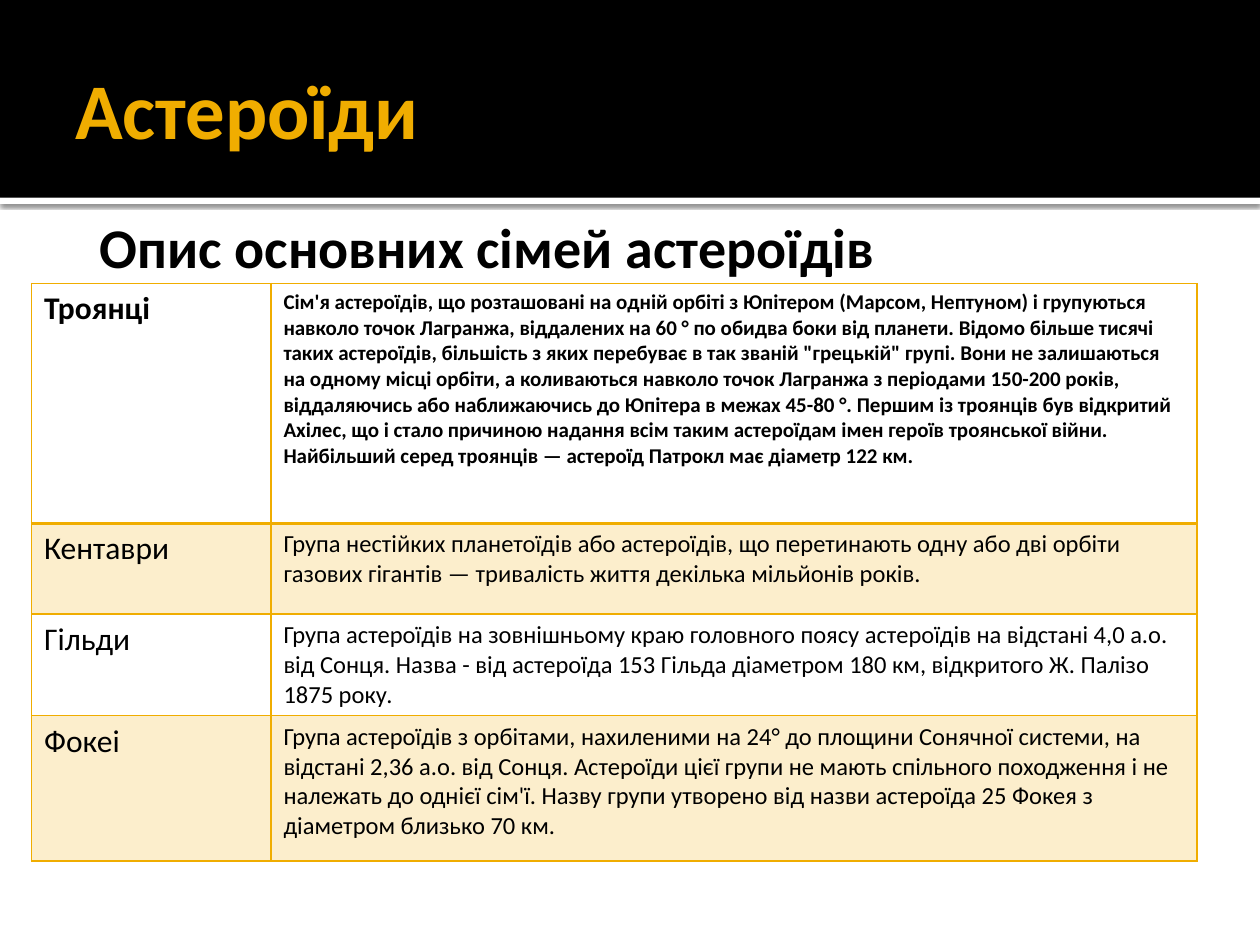
from lxml import etree
from pptx import Presentation
from pptx.dml.color import RGBColor
from pptx.enum import shapes, text
from pptx.oxml import ns
from pptx.util import Pt

GOLD, BLACK, WHITE = "F0AD00", "000000", "FFFFFF"
ROWS = [
    ("Троянці", "Сім'я астероїдів, що розташовані на одній орбіті з Юпітером (Марсом, Нептуном) і групуються "
     "навколо точок Лагранжа, віддалених на 60 ° по обидва боки від планети. Відомо більше тисячі таких "
     "астероїдів, більшість з яких перебуває в так званій \"грецькій\" групі. Вони не залишаються на одному "
     "місці орбіти, а коливаються навколо точок Лагранжа з періодами 150-200 років, віддаляючись або "
     "наближаючись до Юпітера в межах 45-80 °. Першим із троянців був відкритий Ахілес, що і стало причиною "
     "надання всім таким астероїдам імен героїв троянської війни. Найбільший серед троянців — астероїд "
     "Патрокл має діаметр 122 км."),
    ("Кентаври", "Група нестійких планетоїдів або астероїдів, що перетинають одну або дві орбіти газових "
     "гігантів — тривалість життя декілька мільйонів років."),
    ("Гільди", "Група астероїдів на зовнішньому краю головного поясу астероїдів на відстані 4,0 а.о. від "
     "Сонця. Назва - від астероїда 153 Гільда діаметром 180 км, відкритого Ж. Палізо 1875 року."),
    ("Фокеі", "Група астероїдів з орбітами, нахиленими на 24° до площини Сонячної системи, на відстані "
     "2,36 а.о. від Сонця. Астероїди цієї групи не мають спільного походження і не належать до однієї сім'ї. "
     "Назву групи утворено від назви астероїда 25 Фокея з діаметром близько 70 км."),
]


def color(code):
    return RGBColor.from_string(code)


def node(parent, tag, **attrs):
    return etree.SubElement(parent, ns.qn(tag), attrs)


class Deck:
    """Holds the font and the current slide."""

    def __init__(self, slide, font="Calibri"):
        self.slide, self.font = slide, font

    def style(self, frame, size, code, bold):
        for run in frame.paragraphs[0].runs:
            font = run.font
            font.name, font.size, font.bold = self.font, Pt(size), bold
            font.color.rgb = color(code)

    def band(self, top, height, code, shade=False):
        box = self.slide.shapes.add_shape(
            shapes.MSO_SHAPE.RECTANGLE, 0, Pt(top), Pt(720), Pt(height))
        box.shadow.inherit = False
        box.fill.solid()
        box.fill.fore_color.rgb = color(code)
        box.line.fill.background()
        if shade:
            glow = node(box._element.spPr.find(ns.qn("a:effectLst")), "a:outerShdw",
                        blurRad=str(Pt(2.5)), dist=str(Pt(0.8)), dir="5400000",
                        algn="tl", rotWithShape="0")
            node(node(glow, "a:srgbClr", val=BLACK), "a:alpha", val="60000")

    def label(self, words, area, size, code, inset, anchor):
        box = self.slide.shapes.add_textbox(*map(Pt, area))
        frame = box.text_frame
        frame.word_wrap = True
        frame.vertical_anchor = anchor
        frame.margin_left, frame.margin_top, frame.margin_right, frame.margin_bottom = map(Pt, inset)
        frame.text = words
        self.style(frame, size, code, True)

    def cell(self, cell, words, size, head, tint):
        cell.text_frame.text = words
        self.style(cell.text_frame, size, BLACK, head)
        props = cell._tc.get_or_add_tcPr()
        for side in "LRTB":
            wide = 2 if head and side == "B" else 1
            line = node(props, f"a:ln{side}", w=str(Pt(wide)))
            node(node(line, "a:solidFill"), "a:srgbClr", val=GOLD)
        if tint:
            fill = node(node(props, "a:solidFill"), "a:srgbClr", val=GOLD)
            node(fill, "a:alpha", val="20000")
        else:
            node(props, "a:noFill")

    def table(self, rows, left, top, widths, heights):
        frame = self.slide.shapes.add_table(
            len(rows), len(widths), Pt(left), Pt(top), Pt(sum(widths)), Pt(sum(heights)))
        grid = frame.table
        for col, width in zip(grid.columns, widths):
            col.width = Pt(width)
        for i, (row, height) in enumerate(zip(rows, heights)):
            grid.rows[i].height = Pt(height)
            sizes = (18, 14 if i else 12)
            for j, (words, size) in enumerate(zip(row, sizes)):
                self.cell(grid.cell(i, j), words, size, i == 0, i % 2 == 1)


def main():
    show = Presentation()
    show.slide_width, show.slide_height = Pt(720), Pt(540)
    deck = Deck(show.slides.add_slide(show.slide_layouts[6]))
    deck.band(113, 3.6, WHITE, shade=True)
    deck.band(0, 113, BLACK)
    deck.label("Астероїди", (36, 12.5, 648, 98.5), 45, GOLD,
               (7.2, 3.6, 3.6, 3.6), text.MSO_ANCHOR.MIDDLE)
    deck.label(" Опис основних сімей астероїдів", (36, 114, 648, 390), 32, BLACK,
               (13.7, 7.2, 7.2, 3.6), text.MSO_ANCHOR.TOP)
    deck.table(ROWS, 18, 162, (136.8, 529.2), (137, 52, 58, 83))
    show.save("out.pptx")


if __name__ == "__main__":
    main()
